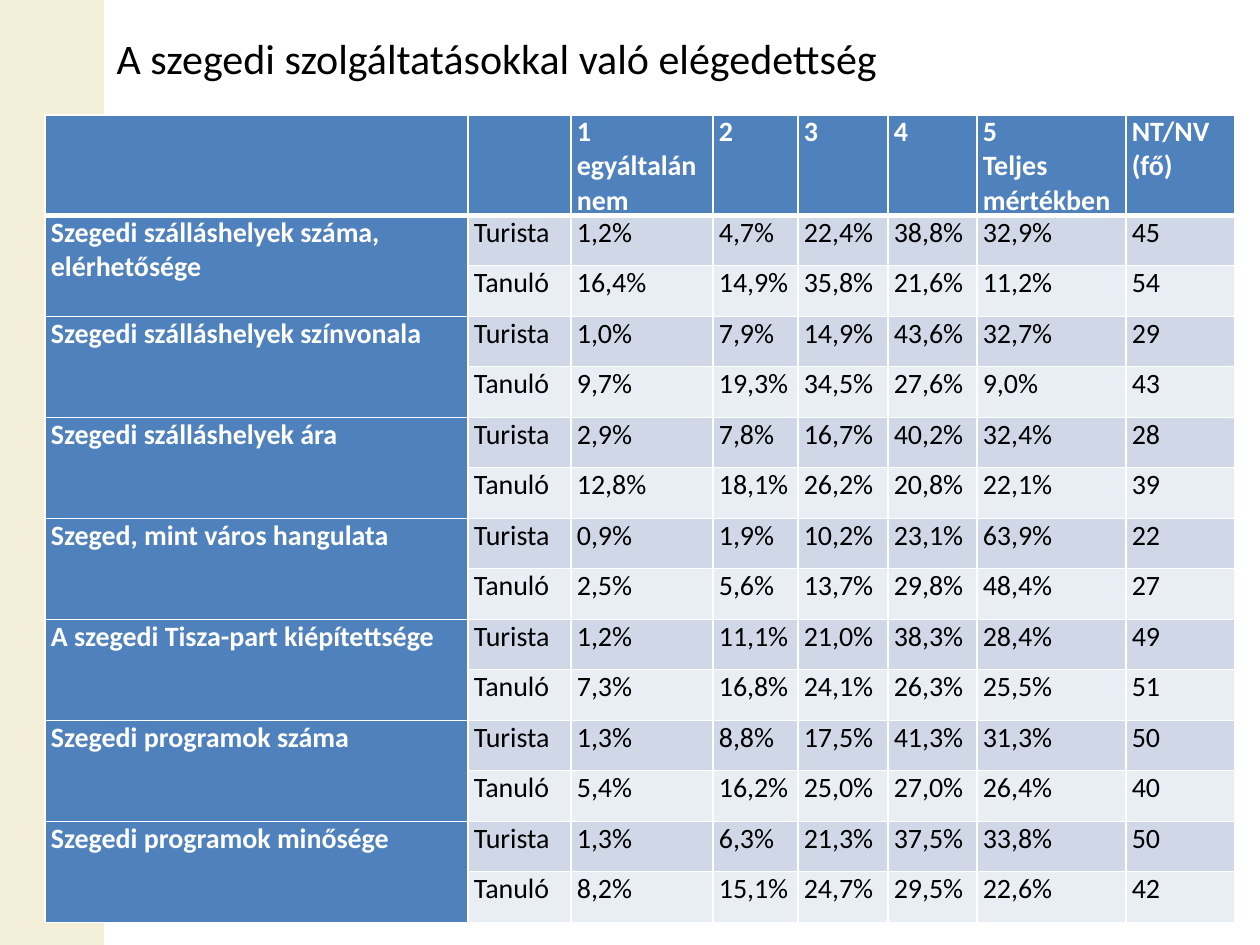
"""Build the slide on satisfaction with the services of Szeged."""
import lxml.etree
import pptx
import pptx.dml.color
import pptx.enum.text
import pptx.oxml.ns
import pptx.util

BLUE = pptx.dml.color.RGBColor(0x4F, 0x81, 0xBD)
DARK_BAND = pptx.dml.color.RGBColor(0xD0, 0xD8, 0xE8)
LIGHT_BAND = pptx.dml.color.RGBColor(0xE9, 0xED, 0xF4)
CREAM = pptx.dml.color.RGBColor(0xF4, 0xEF, 0xD8)
WHITE = pptx.dml.color.RGBColor(0xFF, 0xFF, 0xFF)
BLACK = pptx.dml.color.RGBColor(0, 0, 0)

PIXEL = pptx.util.Inches(1) / 126
COLUMN_WIDTHS = [423, 103, 142, 85, 90, 89, 149, 109]
HEADER_HEIGHT = 89
GROUP_HEIGHTS = [50, 51]
TABLE_HEIGHT = 807
HEADER = ["", "", "1 egyáltalán nem", "2", "3", "4", "5\nTeljes mértékben", "NT/NV\n(fő)"]
RESPONDENTS = ["Turista", "Tanuló"]
RATINGS = {
    "Szegedi szálláshelyek száma, elérhetősége": [
        "1,2% 4,7% 22,4% 38,8% 32,9% 45", "16,4% 14,9% 35,8% 21,6% 11,2% 54"],
    "Szegedi szálláshelyek színvonala": [
        "1,0% 7,9% 14,9% 43,6% 32,7% 29", "9,7% 19,3% 34,5% 27,6% 9,0% 43"],
    "Szegedi szálláshelyek ára": [
        "2,9% 7,8% 16,7% 40,2% 32,4% 28", "12,8% 18,1% 26,2% 20,8% 22,1% 39"],
    "Szeged, mint város hangulata": [
        "0,9% 1,9% 10,2% 23,1% 63,9% 22", "2,5% 5,6% 13,7% 29,8% 48,4% 27"],
    "A szegedi Tisza-part kiépítettsége": [
        "1,2% 11,1% 21,0% 38,3% 28,4% 49", "7,3% 16,8% 24,1% 26,3% 25,5% 51"],
    "Szegedi programok száma": [
        "1,3% 8,8% 17,5% 41,3% 31,3% 50", "5,4% 16,2% 25,0% 27,0% 26,4% 40"],
    "Szegedi programok minősége": [
        "1,3% 6,3% 21,3% 37,5% 33,8% 50", "8,2% 15,1% 24,7% 29,5% 22,6% 42"],
}


def px(value):
    return pptx.util.Emu(round(value * PIXEL))


def set_values(target, values):
    for name, value in values.items():
        setattr(target, name, value)


class SlideBuilder:
    def __init__(self, slide, font_name):
        self.slide = slide
        self.font_name = font_name

    def format_text(self, text_frame, size, color, bold=False):
        values = {"name": self.font_name, "size": pptx.util.Pt(size), "bold": bold}
        for paragraph in text_frame.paragraphs:
            for run in paragraph.runs:
                set_values(run.font, values)
                run.font.color.rgb = color

    def title(self, text, left, top, width, height):
        shape = self.slide.shapes.title
        set_values(shape, {"left": px(left), "top": px(top),
                           "width": px(width), "height": px(height)})
        text_frame = shape.text_frame
        text_frame.text = text
        set_values(text_frame, {
            "word_wrap": False,
            "auto_size": pptx.enum.text.MSO_AUTO_SIZE.SHAPE_TO_FIT_TEXT,
            "vertical_anchor": pptx.enum.text.MSO_ANCHOR.MIDDLE,
        })
        text_frame.paragraphs[0].alignment = pptx.enum.text.PP_ALIGN.LEFT
        self.format_text(text_frame, 24, BLACK)

    def grid(self, left, top, column_widths, row_heights, height):
        frame = self.slide.shapes.add_table(
            len(row_heights), len(column_widths), px(left), px(top),
            px(sum(column_widths)), px(height))
        for column, column_width in zip(frame.table.columns, column_widths):
            column.width = px(column_width)
        for row, row_height in zip(frame.table.rows, row_heights):
            row.height = px(row_height)
        frame.height = px(height)
        return frame.table

    def band(self, left, top, width, height, color):
        table = self.grid(left, top, [width], [height], height)
        set_values(table, {"first_row": False, "horz_banding": False})
        cell = table.cell(0, 0)
        cell.fill.solid()
        cell.fill.fore_color.rgb = color
        self.borders(cell, dict.fromkeys("LRTB"))

    def borders(self, cell, widths):
        properties = cell._tc.get_or_add_tcPr()
        for index, (side, width) in enumerate(widths.items()):
            line = lxml.etree.Element(pptx.oxml.ns.qn(f"a:ln{side}"))
            if width:
                line.set("w", str(pptx.util.Pt(width)))
                fill = lxml.etree.SubElement(line, pptx.oxml.ns.qn("a:solidFill"))
                lxml.etree.SubElement(fill, pptx.oxml.ns.qn("a:srgbClr"), val=str(WHITE))
            else:
                lxml.etree.SubElement(line, pptx.oxml.ns.qn("a:noFill"))
            properties.insert(index, line)

    def cell(self, cell, text, fill, color, bold, widths):
        cell.text = text
        set_values(cell, {"margin_left": px(6), "margin_right": px(6),
                          "margin_top": 0, "margin_bottom": 0})
        cell.fill.solid()
        cell.fill.fore_color.rgb = fill
        self.borders(cell, widths)
        self.format_text(cell.text_frame, 16, color, bold)

    def table(self, rows, left, top, column_widths, row_heights, height):
        table = self.grid(left, top, column_widths, row_heights, height)
        for row_index, texts in enumerate(rows):
            widths = {"L": 1, "R": 1, "T": 3 if row_index == 1 else 1,
                      "B": 3 if row_index == 0 else 1}
            band_color = DARK_BAND if row_index % 2 else LIGHT_BAND
            for column_index, text in enumerate(texts):
                heading = row_index == 0 or column_index == 0
                self.cell(table.cell(row_index, column_index), text,
                          BLUE if heading else band_color,
                          WHITE if heading else BLACK, heading, widths)
        for row_index in range(1, len(rows), len(RESPONDENTS)):
            table.cell(row_index, 0).merge(table.cell(row_index + len(RESPONDENTS) - 1, 0))


def main():
    presentation = pptx.Presentation()
    set_values(presentation, {"slide_width": px(1260), "slide_height": px(945)})
    slide = presentation.slides.add_slide(presentation.slide_layouts[5])
    builder = SlideBuilder(slide, "Calibri")
    rows = [HEADER]
    for service, results in RATINGS.items():
        for label, respondent, values in zip([service, ""], RESPONDENTS, results):
            rows.append([label, respondent, *values.split()])
    builder.band(-5, -4, 109, 949, CREAM)
    builder.table(rows, 45, 115, COLUMN_WIDTHS,
                  [HEADER_HEIGHT] + GROUP_HEIGHTS * len(RATINGS), TABLE_HEIGHT)
    builder.title("A szegedi szolgáltatásokkal való elégedettség", 104, 26, 803, 63)
    presentation.save("out.pptx")


if __name__ == "__main__":
    main()
